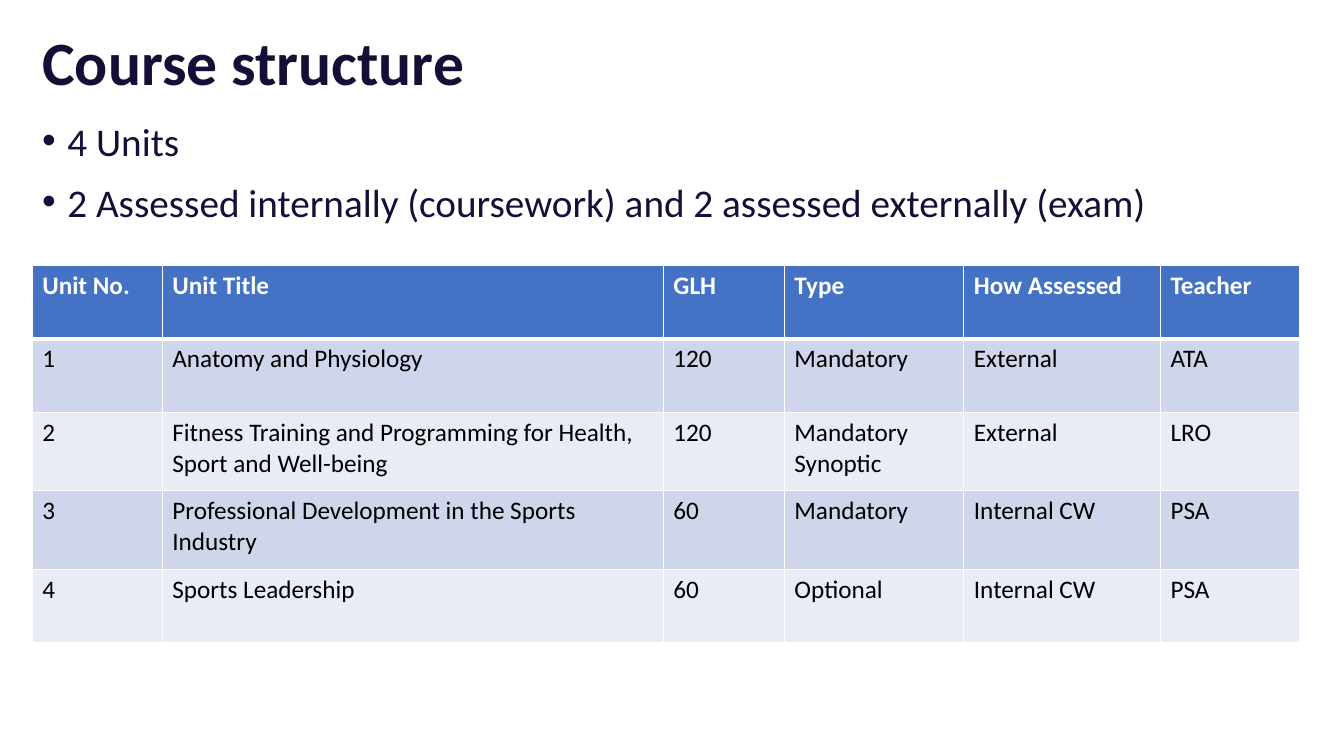
from lxml import etree
from pptx import Presentation
from pptx import util as u
from pptx.dml.color import RGBColor
from pptx.enum import text
from pptx.oxml.ns import qn

COLORS = {"ink": "131038", "header": "4472C4", "odd": "CFD5EA",
          "even": "E9EBF5", "white": "FFFFFF", "black": "000000"}
LEFT, WIDTH = 0.32, 12.62
COLUMNS = [1.29, 4.97, 1.2, 1.78, 1.95, 1.38]
ROWS = [0.73, 0.73, 0.78, 0.78, 0.73]
BULLETS = ["4 Units",
           "2 Assessed internally (coursework) and 2 assessed externally (exam)"]
UNITS = [
    ["Unit No.", "Unit Title", "GLH", "Type", "How Assessed", "Teacher"],
    ["1", "Anatomy and Physiology", "120", "Mandatory", "External", "ATA"],
    ["2", "Fitness Training and Programming for Health, Sport and Well-being",
     "120", "Mandatory Synoptic", "External", "LRO"],
    ["3", "Professional Development in the Sports Industry",
     "60", "Mandatory", "Internal CW", "PSA"],
    ["4", "Sports Leadership", "60", "Optional", "Internal CW", "PSA"],
]


def add_span(para, words, size, color, bold=False):
    span = para.add_run()
    span.text = words
    span.font.name = "Calibri"
    span.font.size = u.Pt(size)
    span.font.bold = bold
    span.font.color.rgb = RGBColor.from_string(COLORS[color])


def add_borders(cell, widths):
    """Draw white cell edges; widths are points for left, right, top, bottom."""
    properties = cell._tc.get_or_add_tcPr()
    for index, (side, width) in enumerate(zip("LRTB", widths)):
        line = etree.Element(qn(f"a:ln{side}"), w=str(u.Pt(width)))
        fill = etree.SubElement(line, qn("a:solidFill"))
        etree.SubElement(fill, qn("a:srgbClr"), val=COLORS["white"])
        properties.insert(index, line)


deck = Presentation()
deck.slide_width, deck.slide_height = u.Inches(13.33), u.Inches(7.5)
page = deck.slides.add_slide(deck.slide_layouts[5])

title = page.shapes.title
title.left, title.top = u.Inches(LEFT), u.Inches(0.19)
title.width, title.height = u.Inches(WIDTH), u.Inches(0.92)
title.text_frame.vertical_anchor = text.MSO_ANCHOR.MIDDLE
para = title.text_frame.paragraphs[0]
para.alignment = text.PP_ALIGN.LEFT
para.line_spacing = 0.9
add_span(para, "Course structure", 44, "ink", True)

box = page.shapes.add_textbox(u.Inches(LEFT), u.Inches(1.11),
                              u.Inches(WIDTH), u.Inches(5.6))
frame = box.text_frame
frame.word_wrap = True
for index, words in enumerate(BULLETS):
    para = frame.add_paragraph() if index else frame.paragraphs[0]
    properties = para._p.get_or_add_pPr()
    properties.set("marL", str(u.Inches(0.25)))
    properties.set("indent", str(-u.Inches(0.25)))
    etree.SubElement(properties, qn("a:buFont"), typeface="Arial")
    etree.SubElement(properties, qn("a:buChar"), char="•")
    para.space_before = u.Pt(10 if index else 0)
    add_span(para, words, 28, "ink")

table = page.shapes.add_table(len(ROWS), len(COLUMNS), u.Inches(LEFT), u.Inches(2.63),
                              u.Inches(sum(COLUMNS)), u.Inches(sum(ROWS))).table
for column, width in zip(table.columns, COLUMNS):
    column.width = u.Inches(width)
for number, (row, height, values) in enumerate(zip(table.rows, ROWS, UNITS)):
    row.height = u.Inches(height)
    is_header = number == 0
    shade = "header" if is_header else "odd" if number % 2 else "even"
    for cell, words in zip(row.cells, values):
        cell.fill.solid()
        cell.fill.fore_color.rgb = RGBColor.from_string(COLORS[shade])
        add_borders(cell, (1, 1, 3 if number == 1 else 1, 3 if is_header else 1))
        add_span(cell.text_frame.paragraphs[0], words, 18,
                 "white" if is_header else "black", is_header)

deck.save("out.pptx")
